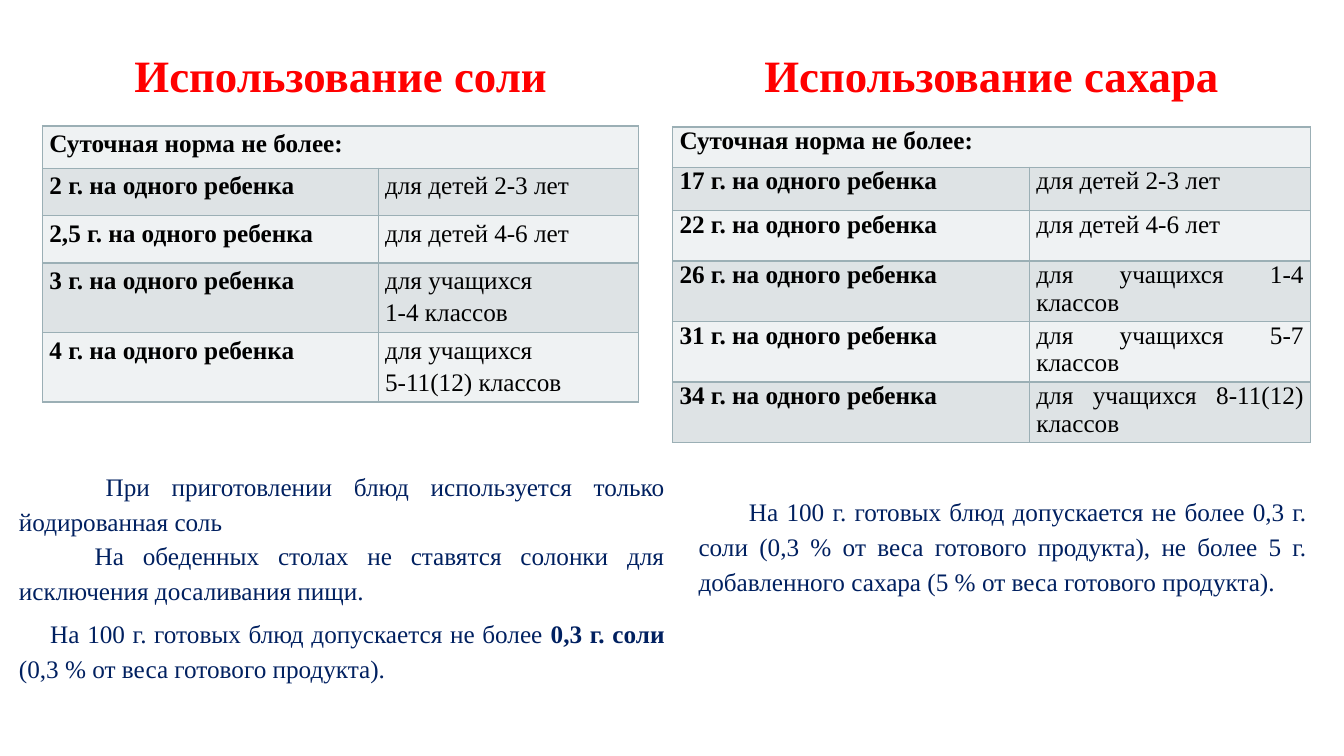
from pptx import Presentation
from pptx.dml.color import RGBColor
from pptx.enum.text import MSO_ANCHOR, PP_ALIGN
from pptx.oxml import parse_xml
from pptx.oxml.ns import nsdecls
from pptx.util import Inches, Pt

RED, NAVY, BLACK = "FF0000", "002060", "000000"
LIGHT, DARK, EDGE = "EFF2F3", "DEE3E5", "9BAFB5"
HEAD = "Суточная норма не более:"
DOSE = " г. на одного ребенка"

SALT = [
    ("2", "для детей 2-3 лет"),
    ("2,5", "для детей 4-6 лет"),
    ("3", "для учащихся\n1-4 классов"),
    ("4", "для учащихся\n5-11(12) классов"),
]
SUGAR = [
    ("17", "для детей 2-3 лет"),
    ("22", "для детей 4-6 лет"),
    ("26", "для учащихся 1-4 классов"),
    ("31", "для учащихся 5-7 классов"),
    ("34", "для учащихся 8-11(12) классов"),
]

# Each paragraph: first-line indent, space before, runs of (text, bold)
SALT_NOTE = [
    (0.86, 0, [("При приготовлении блюд используется только йодированная соль", False)]),
    (0.75, 0, [("На обеденных столах не ставятся солонки для исключения "
                "досаливания пищи.", False)]),
    (0.31, 5.8, [("На 100 г. готовых блюд допускается не более ", False),
                 ("0,3 г. соли ", True),
                 ("(0,3 % от веса готового продукта).", False)]),
]
SUGAR_NOTE = [
    (0.5, 0, [("На 100 г. готовых блюд допускается не более 0,3 г. соли "
               "(0,3 % от веса готового продукта), не более 5 г. добавленного "
               "сахара (5 % от веса готового продукта).", False)]),
]


def color(code):
    return RGBColor.from_string(code)


def apply(item, form):
    for key, value in form.items():
        setattr(item, key, value)


def place(shape, box):
    names = ("left", "top", "width", "height")
    apply(shape, dict(zip(names, map(Inches, box))))


def add_run(para, text, size, code, bold):
    run = para.add_run()
    run.text = text
    apply(run.font, {"name": "Times New Roman", "size": Pt(size), "bold": bold})
    run.font.color.rgb = color(code)


def add_box(slide, box):
    shape = slide.shapes.add_textbox(*map(Inches, box))
    shape.text_frame.word_wrap = True
    return shape


def set_title(shape, box, text):
    place(shape, box)
    frame = shape.text_frame
    apply(frame, {"word_wrap": True, "vertical_anchor": MSO_ANCHOR.TOP})
    para = frame.paragraphs[0]
    para.alignment = PP_ALIGN.CENTER
    add_run(para, text, 32, RED, True)


def add_note(slide, box, parts):
    frame = add_box(slide, box).text_frame
    for i, (indent, before, runs) in enumerate(parts):
        para = frame.add_paragraph() if i else frame.paragraphs[0]
        apply(para, {"alignment": PP_ALIGN.JUSTIFY, "line_spacing": 1.15,
                     "space_before": Pt(before)})
        para._p.get_or_add_pPr().set("indent", str(Inches(indent)))
        for text, bold in runs:
            add_run(para, text, 18, NAVY, bold)


def set_cell(cell, text, bold, fill, space):
    # Borders go in ahead of the fill
    props = cell._tc.get_or_add_tcPr()
    for side in ("lnL", "lnR", "lnT", "lnB"):
        props.append(parse_xml(
            f'<a:{side} {nsdecls("a")} w="{Pt(1)}"><a:solidFill>'
            f'<a:srgbClr val="{EDGE}"/></a:solidFill></a:{side}>'))
    cell.fill.solid()
    cell.fill.fore_color.rgb = color(fill)
    apply(cell, {"margin_left": Inches(0.07), "margin_right": Inches(0.07),
                 "margin_top": 0, "margin_bottom": 0})
    frame = cell.text_frame
    for i, line in enumerate(text.split("\n")):
        para = frame.add_paragraph() if i else frame.paragraphs[0]
        apply(para, {"alignment": PP_ALIGN.JUSTIFY, "line_spacing": space})
        add_run(para, line, 18, BLACK, bold)


def add_norms(slide, spot, cols, rows, norms, space):
    box = (*spot, sum(cols), sum(rows))
    table = slide.shapes.add_table(len(rows), 2, *map(Inches, box)).table
    apply(table, {"first_row": False, "horz_banding": False})
    for col, width in zip(table.columns, cols):
        col.width = Inches(width)
    for row, height in zip(table.rows, rows):
        row.height = Inches(height)
    table.cell(0, 0).merge(table.cell(0, 1))
    lines = [(HEAD, "")] + [(dose + DOSE, who) for dose, who in norms]
    for r, line in enumerate(lines):
        for c, text in enumerate(line):
            set_cell(table.cell(r, c), text, c == 0, DARK if r % 2 else LIGHT, space)


def main():
    deck = Presentation()
    apply(deck, {"slide_width": Inches(13.33), "slide_height": Inches(7.5)})
    slide = deck.slides.add_slide(deck.slide_layouts[5])

    # Salt, left half
    set_title(slide.shapes.title, (1.1, 0.42, 4.56, 0.64), "Использование соли")
    add_norms(slide, (0.42, 1.25), (3.33, 2.58),
              (0.42, 0.47, 0.47, 0.69, 0.69), SALT, 1.15)
    add_note(slide, (0.09, 4.58, 6.6, 2.28), SALT_NOTE)

    # Sugar, right half
    box = (7.25, 0.42, 5.17, 0.64)
    set_title(add_box(slide, box), box, "Использование сахара")
    add_norms(slide, (6.67, 1.26), (3.54, 2.79),
              (0.4, 0.43, 0.5, 0.6, 0.6, 0.6), SUGAR, 1.0)
    add_note(slide, (6.83, 4.83, 6.23, 1.15), SUGAR_NOTE)

    deck.save("out.pptx")


if __name__ == "__main__":
    main()
